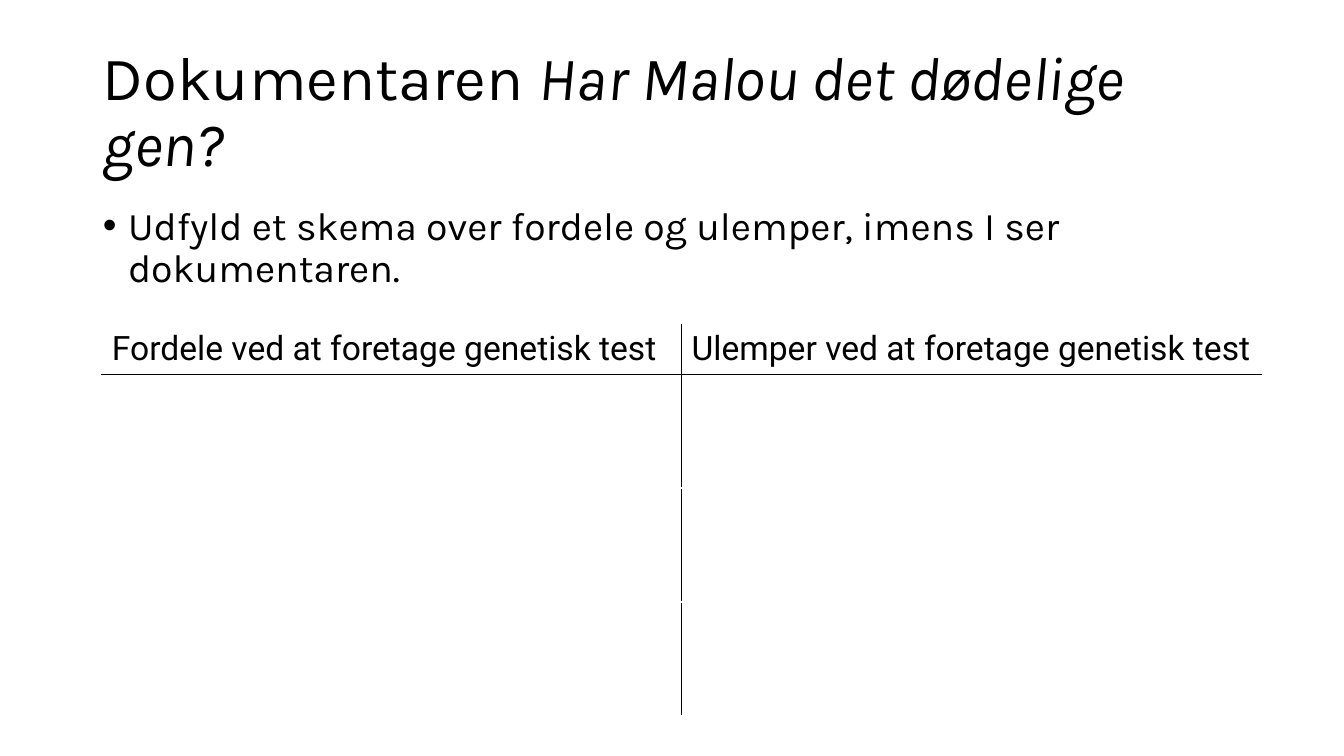
from lxml import etree
from pptx import Presentation
from pptx.dml.color import RGBColor
from pptx.enum.text import MSO_ANCHOR, MSO_AUTO_SIZE, PP_ALIGN
from pptx.oxml.ns import qn
from pptx.util import Inches, Pt

LEFT = PP_ALIGN.LEFT
TOP, MIDDLE = MSO_ANCHOR.TOP, MSO_ANCHOR.MIDDLE
NO_AUTOFIT = MSO_AUTO_SIZE.NONE
COLORS = {"text": "000000", "rule": "000000", "blank": "FFFFFF"}
CONTENT_LEFT, CONTENT_WIDTH = 0.92, 11.5
TABLE_LEFT, TABLE_TOP = 1.01, 3.22
HEADER_HEIGHT, ROW_HEIGHT = 0.47, 1.13
HEADINGS = ["Fordele ved at foretage genetisk test",
            "Ulemper ved at foretage genetisk test"]
ROW_COUNT, COLUMN_COUNT = 4, len(HEADINGS)


def add_run(paragraph, text, font_name, size, italic=None):
    run = paragraph.add_run()
    run.text = text
    run.font.name = font_name
    run.font.size = Pt(size)
    run.font.italic = italic
    run.font.color.rgb = RGBColor.from_string(COLORS["text"])


def place_placeholder(shape, top, height, anchor):
    """Move the placeholder and return its first paragraph, ready for runs."""
    shape.left, shape.top = Inches(CONTENT_LEFT), Inches(top)
    shape.width, shape.height = Inches(CONTENT_WIDTH), Inches(height)
    frame = shape.text_frame
    frame.word_wrap = True
    frame.auto_size = NO_AUTOFIT
    frame.vertical_anchor = anchor
    paragraph = frame.paragraphs[0]
    paragraph.alignment = LEFT
    paragraph.line_spacing = 0.9
    paragraph.space_before = Pt(0)
    return paragraph


presentation = Presentation()
presentation.slide_width, presentation.slide_height = Inches(13.33), Inches(7.5)
slide = presentation.slides.add_slide(presentation.slide_layouts[1])

title = place_placeholder(slide.shapes.title, 0.4, 1.45, MIDDLE)
add_run(title, "Dokumentaren ", "Karla", 44)
add_run(title, "Har Malou det dødelige gen?", "Karla", 44, italic=True)

task = place_placeholder(slide.placeholders[1], 2, 4.76, TOP)
task_properties = task._p.get_or_add_pPr()
task_properties.set("marL", str(Inches(0.25)))
task_properties.set("indent", str(Inches(-0.25)))
etree.SubElement(task_properties, qn("a:buFont"), typeface="Arial")
etree.SubElement(task_properties, qn("a:buChar"), char="•")
add_run(task, "Udfyld et skema over fordele og ulemper, imens I ser dokumentaren.",
        "Karla", 28)

table = slide.shapes.add_table(
    ROW_COUNT, COLUMN_COUNT, Inches(TABLE_LEFT), Inches(TABLE_TOP),
    Inches(CONTENT_WIDTH),
    Inches(HEADER_HEIGHT + (ROW_COUNT - 1) * ROW_HEIGHT)).table
table.first_row = table.horz_banding = False
for column in table.columns:
    column.width = Inches(CONTENT_WIDTH / COLUMN_COUNT)

for row_index, row in enumerate(table.rows):
    row.height = Inches(ROW_HEIGHT if row_index else HEADER_HEIGHT)
    for column_index, cell in enumerate(row.cells):
        # Only the inner column edge and the edge under the headings are ruled.
        ruled_edges = {
            "lnL": column_index == 1,
            "lnR": column_index == 0,
            "lnT": row_index == 1,
            "lnB": row_index == 0,
        }
        cell_properties = cell._tc.get_or_add_tcPr()
        for edge, is_ruled in ruled_edges.items():
            line = etree.SubElement(cell_properties, qn(f"a:{edge}"), w=str(Pt(1)))
            fill = etree.SubElement(line, qn("a:solidFill"))
            color = COLORS["rule" if is_ruled else "blank"]
            etree.SubElement(fill, qn("a:srgbClr"), val=color)
        cell.fill.background()

for cell, heading in zip(table.rows[0].cells, HEADINGS):
    add_run(cell.text_frame.paragraphs[0], heading, "Roboto", 24)

presentation.save("out.pptx")
